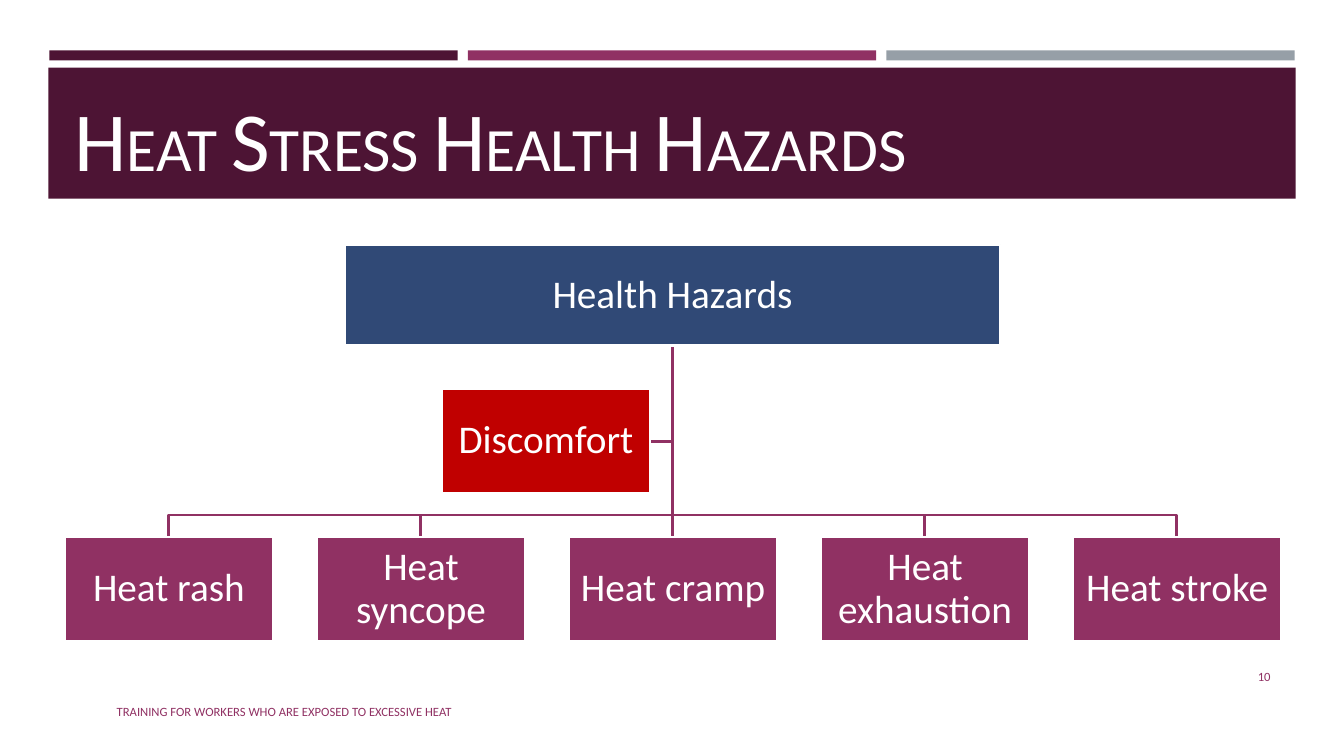
from lxml import etree
from pptx import Presentation
from pptx.dml.color import RGBColor
from pptx.enum.shapes import MSO_CONNECTOR, MSO_SHAPE
from pptx.enum.text import MSO_ANCHOR, PP_ALIGN
from pptx.oxml.ns import qn
from pptx.util import Pt

PX = 9144
PLUM = RGBColor(0x4D, 0x14, 0x34)
MAGENTA = RGBColor(0x90, 0x31, 0x63)
GREY = RGBColor(0x96, 0x9F, 0xA7)
NAVY = RGBColor(0x30, 0x49, 0x76)
RED = RGBColor(0xC0, 0x00, 0x00)
WHITE = RGBColor(0xFF, 0xFF, 0xFF)
LEFT, CENTER, RIGHT = PP_ALIGN.LEFT, PP_ALIGN.CENTER, PP_ALIGN.RIGHT
MIDDLE, BOTTOM = MSO_ANCHOR.MIDDLE, MSO_ANCHOR.BOTTOM
RECTANGLE, STRAIGHT = MSO_SHAPE.RECTANGLE, MSO_CONNECTOR.STRAIGHT

BOX_WIDTH, BOX_HEIGHT = 207, 103
TRUNK_X, TRUNK_TOP, BRANCH_Y, HAZARD_TOP = 667, 343, 511, 533
HAZARD_LEFT, HAZARD_STEP = 64, 250
HAZARDS = ["Heat rash", "Heat syncope", "Heat cramp", "Heat exhaustion", "Heat stroke"]
TITLE_RUNS = [("H", 60), ("EAT ", 44), ("S", 60), ("TRESS ", 44),
              ("H", 60), ("EALTH ", 44), ("H", 60), ("AZARDS", 44)]


class SlideBuilder:
    """Draws styled elements on the current slide."""

    font = "Calibri"
    line_width = Pt(1.75)

    def __init__(self, slide):
        self.slide = slide

    def add_runs(self, shape, runs, *, color=WHITE, align=LEFT, anchor=MIDDLE, spacing=1.0):
        """Fill a shape with one paragraph of (text, size) runs."""
        frame = shape.text_frame
        frame.word_wrap = True
        frame.vertical_anchor = anchor
        paragraph = frame.paragraphs[0]
        paragraph.alignment = align
        paragraph.line_spacing = spacing
        for text, size in runs:
            run = paragraph.add_run()
            run.text = text
            run.font.name = self.font
            run.font.size = Pt(size)
            run.font.color.rgb = color

    def text(self, left, top, width, height, runs, **style):
        """Add a text box."""
        shape = self.slide.shapes.add_textbox(left * PX, top * PX, width * PX, height * PX)
        self.add_runs(shape, runs, **style)

    def bar(self, left, top, width, height, color):
        """Add a plain filled rectangle."""
        shape = self.slide.shapes.add_shape(
            RECTANGLE, left * PX, top * PX, width * PX, height * PX)
        shape.shadow.inherit = False
        shape.fill.solid()
        shape.fill.fore_color.rgb = color
        shape.line.fill.background()
        return shape

    def box(self, left, top, width, height, label, color):
        """Add a labelled box of the hierarchy."""
        shape = self.bar(left, top, width, height, color)
        shape.line.color.rgb = WHITE
        shape.line.width = self.line_width
        frame = shape.text_frame
        frame.margin_left = frame.margin_right = 2 * PX
        frame.margin_top = frame.margin_bottom = 2 * PX
        self.add_runs(shape, [(label, 28)], align=CENTER, spacing=0.9)

    def elbow(self, *points):
        """Add an open line through the points."""
        builder = self.slide.shapes.build_freeform(*points[0], scale=float(PX))
        builder.add_line_segments(points[1:], close=False)
        shape = builder.convert_to_shape()
        shape.shadow.inherit = False
        shape.fill.background()
        shape.line.color.rgb = MAGENTA
        shape.line.width = self.line_width

    def straight(self, start_x, start_y, end_x, end_y):
        """Add a straight line."""
        line = self.slide.shapes.add_connector(
            STRAIGHT, start_x * PX, start_y * PX, end_x * PX, end_y * PX)
        line.line.color.rgb = MAGENTA
        line.line.width = self.line_width
        etree.SubElement(line._element.spPr, qn("a:effectLst"))


def main():
    """Build and save the slide."""
    presentation = Presentation()
    presentation.slide_width = 1333 * PX
    presentation.slide_height = 750 * PX
    slide = SlideBuilder(presentation.slides.add_slide(presentation.slide_layouts[6]))

    for index, color in enumerate([PLUM, MAGENTA, GREY]):
        slide.bar(49 + 415 * index, 50, 405, 10, color)
    slide.bar(48, 67, 1237, 130, PLUM)
    slide.text(64, 81, 1206, 111, TITLE_RUNS, anchor=BOTTOM)

    trunk = (TRUNK_X, TRUNK_TOP)
    discomfort_left, discomfort_top = 438, 386
    discomfort_right, discomfort_middle = discomfort_left + BOX_WIDTH, 438
    slide.elbow(trunk, (TRUNK_X, discomfort_middle), (discomfort_right, discomfort_middle))
    lefts = [HAZARD_LEFT + HAZARD_STEP * index for index in range(len(HAZARDS))]
    for left in lefts:
        middle = left + BOX_WIDTH // 2
        if middle == TRUNK_X:
            slide.straight(*trunk, TRUNK_X, HAZARD_TOP)
        else:
            slide.elbow(trunk, (TRUNK_X, BRANCH_Y), (middle, BRANCH_Y), (middle, HAZARD_TOP))

    slide.box(342, 243, 650, 100, "Health Hazards", NAVY)
    for left, hazard in zip(lefts, HAZARDS):
        slide.box(left, HAZARD_TOP, BOX_WIDTH, BOX_HEIGHT, hazard, MAGENTA)
    slide.box(discomfort_left, discomfort_top, BOX_WIDTH, BOX_HEIGHT, "Discomfort", RED)

    slide.text(106, 686, 756, 40,
               [("TRAINING FOR WORKERS WHO ARE EXPOSED TO EXCESSIVE HEAT", 9)], color=MAGENTA)
    slide.text(1155, 651, 115, 40, [("10", 9)], color=MAGENTA, align=RIGHT)

    presentation.save("out.pptx")


if __name__ == "__main__":
    main()
